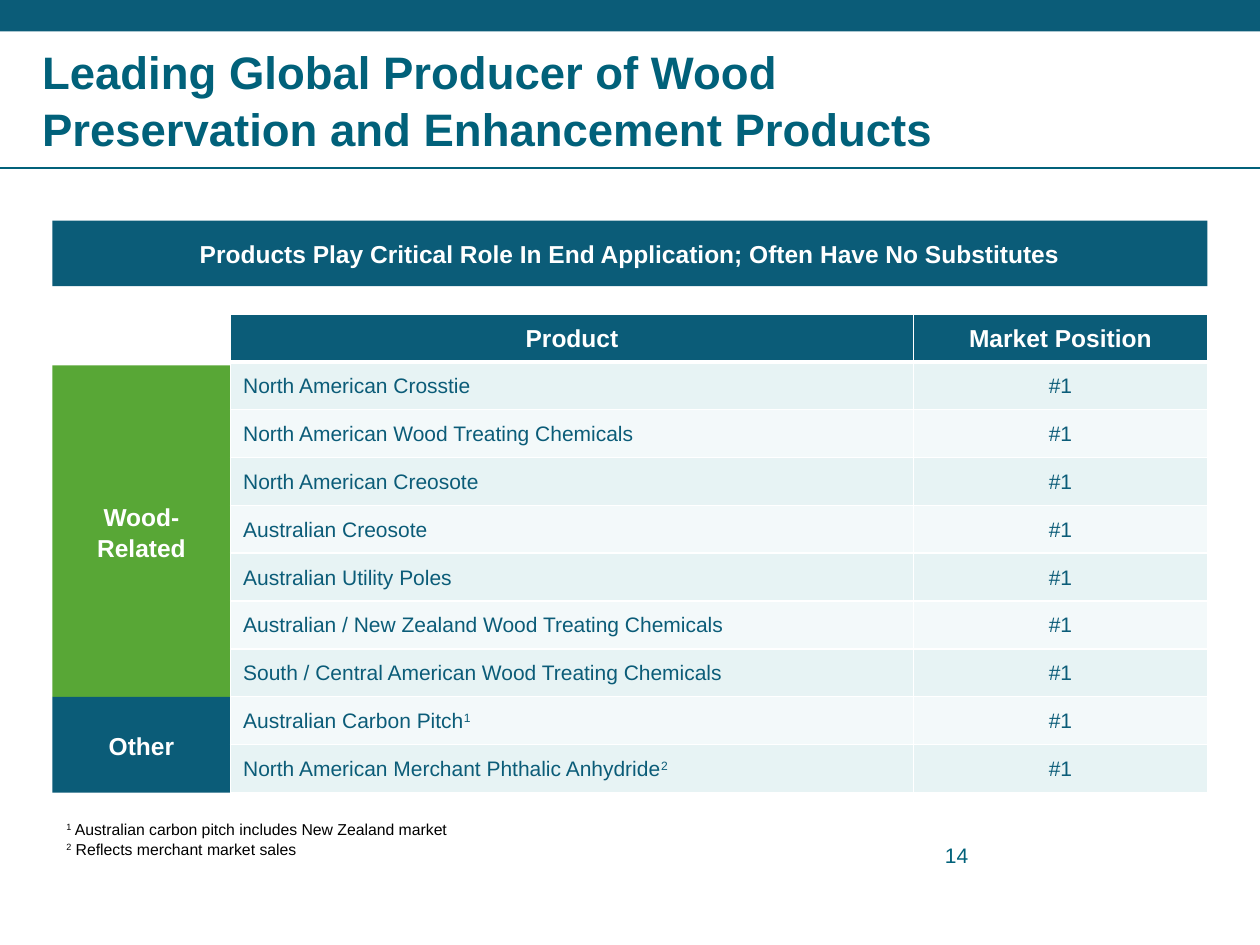
from lxml import etree
from pptx import Presentation
from pptx.dml.color import RGBColor
from pptx.enum.shapes import MSO_CONNECTOR as Connector, MSO_SHAPE as Preset
from pptx.enum.text import MSO_ANCHOR as Anchor, PP_ALIGN as Align
from pptx.oxml.ns import qn
from pptx.util import Pt

BLUE, TEAL, GREEN = "0B5C78", "01617A", "58A736"
WHITE, BLACK = "FFFFFF", "000000"
BANDS = ("E7F3F4", "F3F9FA")
FONT = "Arial"
LINE_SPACING = 1.05

# Each product is a name and its footnote mark
WOOD_PRODUCTS = [
    ("North American Crosstie", ""),
    ("North American Wood Treating Chemicals", ""),
    ("North American Creosote", ""),
    ("Australian Creosote", ""),
    ("Australian Utility Poles", ""),
    ("Australian / New Zealand Wood Treating Chemicals", ""),
    ("South / Central American Wood Treating Chemicals", ""),
]
OTHER_PRODUCTS = [
    ("Australian Carbon Pitch", "1"),
    ("North American Merchant Phthalic Anhydride", "2"),
]


def color(value):
    return RGBColor.from_string(value)


def add_run(paragraph, text, size, ink, bold=False, raised=False):
    run = paragraph.add_run()
    run.text = text
    font = run.font
    font.name, font.size, font.bold = FONT, Pt(size), bold
    font.color.rgb = color(ink)
    if raised:
        font._element.set("baseline", "30000")


def write(frame, lines, size, ink, bold=False, align=Align.LEFT):
    """Fill a frame with lines, each a list of (text, raised) runs."""
    for index, runs in enumerate(lines):
        paragraph = frame.add_paragraph() if index else frame.paragraphs[0]
        paragraph.alignment = align
        paragraph.line_spacing = LINE_SPACING
        for text, raised in runs:
            if text:
                add_run(paragraph, text, size, ink, bold, raised)


def add_text(slide, box, lines, size, ink, bold=False, anchor=Anchor.TOP, insets=(0, 0)):
    frame = slide.shapes.add_textbox(*map(Pt, box)).text_frame
    frame.word_wrap = True
    frame.vertical_anchor = anchor
    frame.margin_left = frame.margin_right = Pt(insets[0])
    frame.margin_top = frame.margin_bottom = Pt(insets[1])
    write(frame, lines, size, ink, bold)


def add_block(slide, box, fill, label=""):
    shape = slide.shapes.add_shape(Preset.RECTANGLE, *map(Pt, box))
    shape.shadow.inherit = False
    shape.fill.solid()
    shape.fill.fore_color.rgb = color(fill)
    shape.line.fill.background()
    if label:
        frame = shape.text_frame
        frame.word_wrap = True
        frame.vertical_anchor = Anchor.MIDDLE
        write(frame, [[(label, False)]], 14, WHITE, True, Align.CENTER)


def add_header(slide, box):
    left, top, width, height = box
    # Top band and rule under the title
    add_block(slide, (left, top, width, 18), BLUE)
    bottom = Pt(top + height)
    rule = slide.shapes.add_connector(Connector.STRAIGHT, Pt(left), bottom, Pt(left + width), bottom)
    rule.line.color.rgb = color(TEAL)
    rule.line.width = Pt(0.75)
    etree.SubElement(rule._element.spPr, qn("a:effectLst"))
    # Title
    title = "Leading Global Producer of Wood Preservation and Enhancement Products"
    add_text(slide, (left + 24, top + 25, 561, 64), [[(title, False)]], 26, TEAL, True, Anchor.BOTTOM)


def set_borders(cell, bottom_width):
    properties = cell._tc.get_or_add_tcPr()
    for index, (side, width) in enumerate((("L", 1), ("R", 1), ("T", 1), ("B", bottom_width))):
        line = etree.Element(qn(f"a:ln{side}"), w=str(Pt(width)))
        fill = etree.SubElement(line, qn("a:solidFill"))
        etree.SubElement(fill, qn("a:srgbClr"), val=WHITE)
        properties.insert(index, line)


def fill_cell(cell, runs, fill, size, ink, bold, align, bottom_width):
    cell.fill.solid()
    cell.fill.fore_color.rgb = color(fill)
    cell.vertical_anchor = Anchor.MIDDLE
    write(cell.text_frame, [runs], size, ink, bold, align)
    set_borders(cell, bottom_width)


def add_products(slide, box):
    left, top, width, height = box
    label_width, position_width = 101.75, 168
    products = WOOD_PRODUCTS + OTHER_PRODUCTS
    row_height = height / (len(products) + 1)

    # Group labels beside the table; the first clears the header border
    split = top + row_height * (1 + len(WOOD_PRODUCTS))
    first = top + row_height + 2
    add_block(slide, (left, first, label_width, split - first), GREEN, "Wood-Related")
    add_block(slide, (left, split, label_width, top + height - split), BLUE, "Other")

    # Product table
    table_box = (left + label_width, top, width - label_width, height)
    table = slide.shapes.add_table(len(products) + 1, 2, *map(Pt, table_box)).table
    table.columns[0].width = Pt(width - label_width - position_width)
    table.columns[1].width = Pt(position_width)
    for row in table.rows:
        row.height = Pt(row_height)
    for column, heading in enumerate(("Product", "Market Position")):
        fill_cell(table.cell(0, column), [(heading, False)], BLUE, 14, WHITE, True, Align.CENTER, 3)
    for index, (name, mark) in enumerate(products):
        band = BANDS[index % 2]
        name_cell, position_cell = table.cell(index + 1, 0), table.cell(index + 1, 1)
        fill_cell(name_cell, [(name, False), (mark, True)], band, 12, BLUE, False, Align.LEFT, 1)
        fill_cell(position_cell, [("#1", False)], band, 12, BLUE, False, Align.CENTER, 1)
    # The header's thick lower border is shared with the first product row
    for column in range(2):
        table.cell(1, column)._tc.tcPr.find(qn("a:lnT")).set("w", str(Pt(3)))


def add_footer(slide, box):
    left, top, width, height = box
    notes = [
        [("1", True), (" Australian carbon pitch includes New Zealand market", False)],
        [("2", True), (" Reflects merchant market sales", False)],
    ]
    add_text(slide, (left, top, 254, height), notes, 9, BLACK, anchor=Anchor.MIDDLE, insets=(7.9, 3.6))
    # Page number
    add_text(slide, (left + width - 150, top + 16, 150, 18), [[("14", False)]], 12, TEAL)


def main():
    presentation = Presentation()
    presentation.slide_width, presentation.slide_height = Pt(720), Pt(540)
    slide = presentation.slides.add_slide(presentation.slide_layouts[6])
    add_header(slide, (0, 0, 720, 96))
    message = "Products Play Critical Role In End Application; Often Have No Substitutes"
    add_block(slide, (30, 126, 660, 37.5), BLUE, message)
    add_products(slide, (30, 179.5, 660, 273.5))
    add_footer(slide, (30, 464.5, 660, 29))
    presentation.save("out.pptx")


if __name__ == "__main__":
    main()
